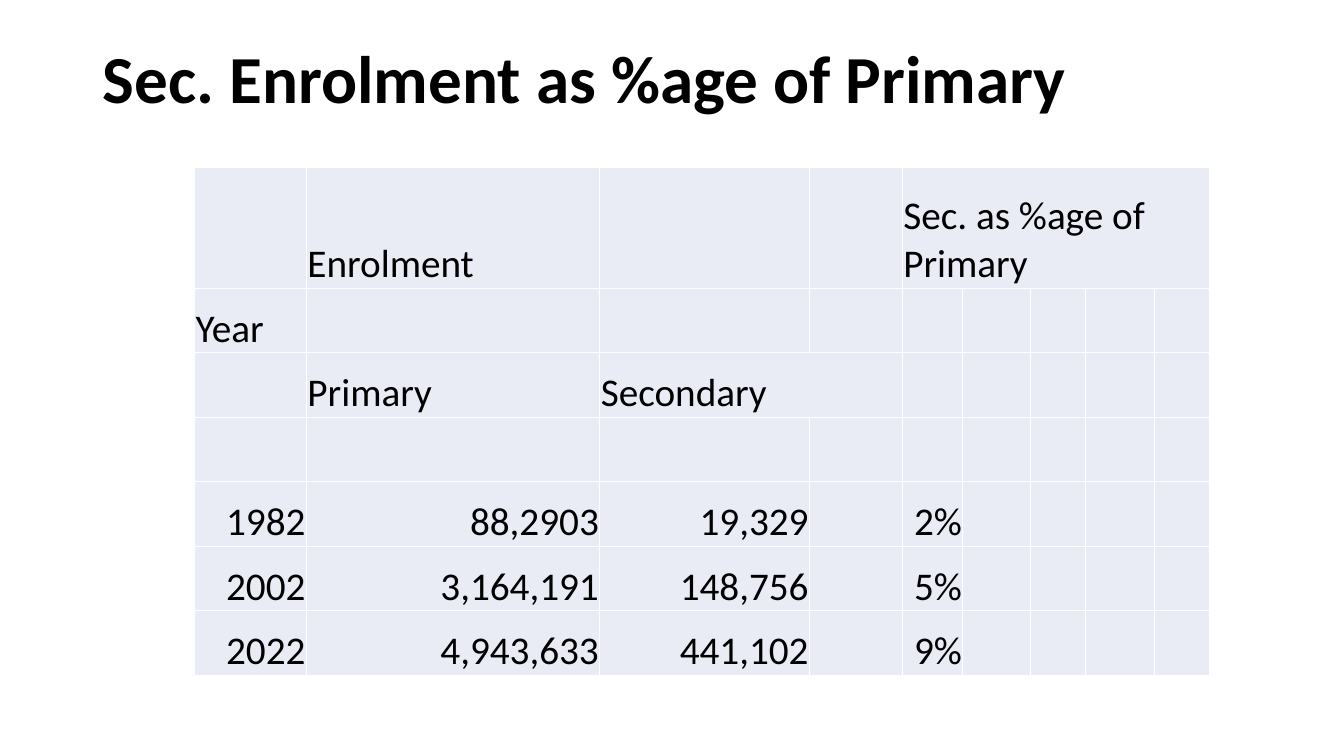
from lxml.etree import SubElement
from pptx import Presentation
from pptx.dml.color import RGBColor
from pptx.enum.text import MSO_ANCHOR, PP_ALIGN
from pptx.oxml.ns import qn
from pptx.util import Inches, Pt

COLUMN_WIDTHS = [1.11, 2.91, 2.08, 0.92, 0.6, 0.67, 0.55, 0.68, 0.55]
ROW_HEIGHTS = [1.2] + [0.64] * 6
ENROLMENT_ROWS = [
    ["", "Enrolment", "", "", "Sec. as %age of Primary"],
    ["Year"],
    ["", "Primary", "Secondary"],
    [],
    ["1982", "88,2903", "19,329", "", "2%"],
    ["2002", "3,164,191", "148,756", "", "5%"],
    ["2022", "4,943,633", "441,102", "", "9%"],
]
FIRST_DATA_ROW = 4
MERGED_CELLS = [((0, 4), (0, 8)), ((2, 2), (2, 3))]


def color(value):
    return RGBColor.from_string(value)


def write_text(text_frame, text, size=28, bold=False, align=PP_ALIGN.LEFT, spacing=1.0):
    paragraph = text_frame.paragraphs[0]
    paragraph.alignment = align
    paragraph.line_spacing = spacing
    run = paragraph.add_run()
    run.text = text
    run.font.name = "Calibri"
    run.font.size = Pt(size)
    run.font.bold = bold
    run.font.color.rgb = color("000000")


def add_borders(cell, line_color, width):
    properties = cell._tc.get_or_add_tcPr()
    for side in ("a:lnL", "a:lnR", "a:lnT", "a:lnB"):
        line = SubElement(properties, qn(side), w=str(Pt(width)))
        fill = SubElement(line, qn("a:solidFill"))
        SubElement(fill, qn("a:srgbClr"), val=line_color)


def format_cell(cell):
    add_borders(cell, "FFFFFF", 1)
    cell.fill.solid()
    cell.fill.fore_color.rgb = color("E9EBF5")
    cell.vertical_anchor = MSO_ANCHOR.BOTTOM
    cell.margin_left = cell.margin_right = cell.margin_top = Inches(0.01)
    cell.margin_bottom = 0


def add_title(slide, left, top, width, height):
    box = slide.shapes.add_textbox(Inches(left), Inches(top), Inches(width), Inches(height))
    box.text_frame.word_wrap = True
    box.text_frame.vertical_anchor = MSO_ANCHOR.MIDDLE
    write_text(box.text_frame, "Sec. Enrolment as %age of Primary", size=48, bold=True, spacing=0.9)


def add_enrolment_table(slide, left, top):
    table = slide.shapes.add_table(
        len(ROW_HEIGHTS), len(COLUMN_WIDTHS), Inches(left), Inches(top),
        Inches(sum(COLUMN_WIDTHS)), Inches(sum(ROW_HEIGHTS)),
    ).table
    table.first_row = False
    table.horz_banding = False
    for column, width in zip(table.columns, COLUMN_WIDTHS):
        column.width = Inches(width)
    for row, height in zip(table.rows, ROW_HEIGHTS):
        row.height = Inches(height)
    for cell in table.iter_cells():
        format_cell(cell)
    for start, end in MERGED_CELLS:
        table.cell(*start).merge(table.cell(*end))
    for row_index, texts in enumerate(ENROLMENT_ROWS):
        align = PP_ALIGN.RIGHT if row_index >= FIRST_DATA_ROW else PP_ALIGN.LEFT
        for column_index, text in enumerate(texts):
            if text:
                write_text(table.cell(row_index, column_index).text_frame, text, align=align)


def main():
    presentation = Presentation()
    presentation.slide_width = Inches(13.33)
    presentation.slide_height = Inches(7.5)
    slide = presentation.slides.add_slide(presentation.slide_layouts[6])
    add_title(slide, 0.92, 0.33, 11.5, 0.96)
    add_enrolment_table(slide, 1.93, 1.66)
    presentation.save("out.pptx")


if __name__ == "__main__":
    main()
